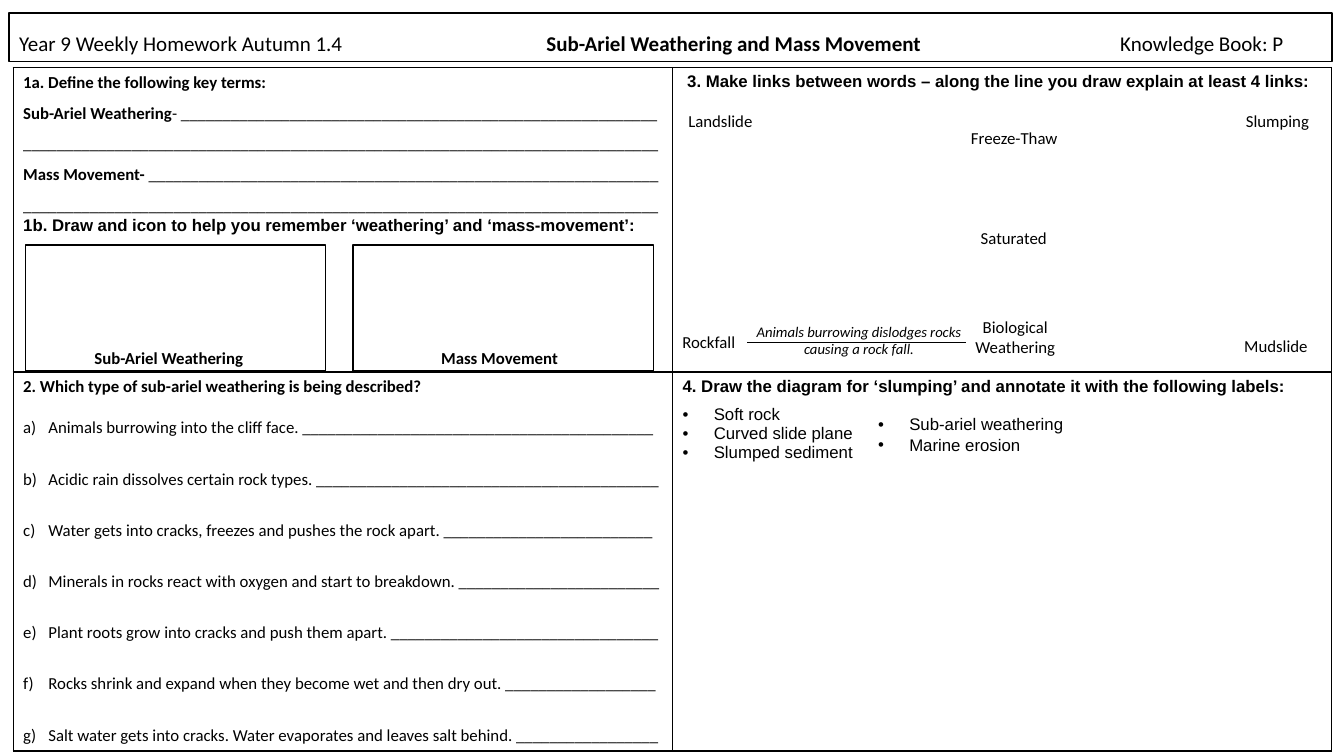
import dataclasses
import typing

import lxml.etree
import pptx
import pptx.dml.color
import pptx.enum.shapes
import pptx.enum.text
import pptx.oxml.ns
import pptx.util

Inches = pptx.util.Inches
Align = pptx.enum.text.PP_ALIGN


@dataclasses.dataclass(frozen=True)
class Theme:
    ink: pptx.dml.color.RGBColor = pptx.dml.color.RGBColor(0, 0, 0)
    paper: pptx.dml.color.RGBColor = pptx.dml.color.RGBColor(255, 255, 255)
    sans: str = "Calibri"
    plain: str = "Arial"
    title: float = 15
    body: float = 12
    note: float = 10.5
    rule: float = 1
    thin: float = 0.5


THEME = Theme()


class Run(typing.NamedTuple):
    text: str
    bold: bool = False
    font: str = THEME.sans
    size: float = THEME.body
    slant: bool = False


class Para(typing.NamedTuple):
    runs: list[Run]
    gap: float = 1
    mark: str = ""
    inset: float = 0
    align: Align = Align.LEFT


class Label(typing.NamedTuple):
    left: float
    top: float
    width: float
    height: float
    paras: list[Para]


def head(text: str, font: str = THEME.plain) -> Para:
    return Para([Run(text, True, font)])


def blank(count: int) -> str:
    """Return an answer line of the given number of underscores."""
    return "_" * count


def point(text: str, gap: float = 1) -> Para:
    return Para([Run(text, font=THEME.plain)], gap, "•", 0.31)


def word(left: float, top: float, width: float, text: str, height: float = 0.3,
         bold: bool = False, size: float = THEME.body, slant: bool = False) -> Label:
    run = Run(text, bold, size=size, slant=slant)
    return Label(left, top, width, height, [Para([run], align=Align.CENTER)])


TITLE = Para([
    Run("Year 9 Weekly Homework Autumn 1.4\t", size=THEME.title),
    Run("Sub-Ariel Weathering and Mass Movement\t", True, size=THEME.title),
    Run("Knowledge Book: P", size=THEME.title),
], 0.9)
STOPS = [5.23, 10.92]

TERMS = [
    head("1a. Define the following key terms:", THEME.sans),
    Para([Run("Sub-Ariel Weathering", True), Run("- " + blank(57))], 1.5),
    Para([Run(blank(76))], 1.5),
    Para([Run("Mass Movement- ", True), Run(blank(61))], 1.5),
    Para([Run(blank(76))], 1.5),
    head("1b. Draw and icon to help you remember ‘weathering’ and ‘mass-movement’:"),
]
LINKS = [head(" 3. Make links between words – along the line you draw explain at least 4 links:")]
CLUES = [
    ("Animals burrowing into the cliff face.", 42),
    ("Acidic rain dissolves certain rock types.", 41),
    ("Water gets into cracks, freezes and pushes the rock apart.", 25),
    ("Minerals in rocks react with oxygen and start to breakdown.", 24),
    ("Plant roots grow into cracks and push them apart.", 32),
    ("Rocks shrink and expand when they become wet and then dry out.", 18),
    ("Salt water gets into cracks. Water evaporates and leaves salt behind.", 17),
]
TYPES = [head("2. Which type of sub-ariel weathering is being described?", THEME.sans)] + [
    Para([Run(f"{clue} {blank(count)}")], 2.5 if row else 2, "a)", 0.25)
    for row, (clue, count) in enumerate(CLUES)
]
SLUMP = [
    head("4. Draw the diagram for ‘slumping’ and annotate it with the following labels:"),
    point("Soft rock", 1.5), point("Curved slide plane"), point("Slumped sediment"),
]
GRID = [[TERMS, LINKS], [TYPES, SLUMP]]
TALL = [3.02, 3.76]

WORDS = [
    word(6.65, 1.05, 0.99, "Landslide"),
    word(6.61, 3.24, 0.84, "Rockfall"),
    word(12.16, 3.28, 0.99, "Mudslide"),
    word(12.15, 1.05, 1.04, "Slumping"),
    word(9.58, 2.21, 0.95, "Saturated"),
    word(9.48, 1.22, 1.16, "Freeze-Thaw"),
    word(9.47, 3.09, 1.2, "Biological Weathering", 0.5),
    word(7.32, 3.15, 2.4, "Animals burrowing dislodges rocks causing a rock fall.",
         0.45, size=THEME.note, slant=True),
    Label(8.61, 4.06, 2.22, 0.5, [point("Sub-ariel weathering"), point("Marine erosion")]),
]
NAMES = [
    word(0.81, 3.4, 1.73, "Sub-Ariel Weathering", bold=True),
    word(4.09, 3.4, 1.73, "Mass Movement", bold=True),
]


def add(parent: typing.Any, tag: str, **attrs: str) -> typing.Any:
    return lxml.etree.SubElement(parent, pptx.oxml.ns.qn(tag), attrs)


def write(frame: typing.Any, paras: list[Para]) -> None:
    for row, para in enumerate(paras):
        line = frame.add_paragraph() if row else frame.paragraphs[0]
        line.alignment = para.align
        line.line_spacing = para.gap
        if para.mark:
            props = line._p.get_or_add_pPr()
            props.set("marL", str(Inches(para.inset)))
            props.set("indent", str(-Inches(para.inset)))
            if para.mark == "a)":
                add(props, "a:buAutoNum", type="alphaLcParenR")
            else:
                add(props, "a:buFont", typeface=THEME.plain)
                add(props, "a:buChar", char=para.mark)
        for part in para.runs:
            run = line.add_run()
            run.text = part.text
            run.font.name = part.font
            run.font.size = pptx.util.Pt(part.size)
            run.font.bold = part.bold
            run.font.italic = part.slant
            run.font.color.rgb = THEME.ink


def frame_box(shape: typing.Any) -> None:
    """Give a shape a white fill and a black outline."""
    shape.fill.solid()
    shape.fill.fore_color.rgb = THEME.paper
    shape.line.color.rgb = THEME.ink
    shape.line.width = pptx.util.Pt(THEME.rule)


def draw_title(slide: typing.Any) -> None:
    title = slide.shapes.title
    title.left, title.top, title.width, title.height = map(Inches, (0.09, 0.13, 13.12, 0.48))
    frame_box(title)
    frame = title.text_frame
    frame.auto_size = pptx.enum.text.MSO_AUTO_SIZE.NONE
    frame.vertical_anchor = pptx.enum.text.MSO_ANCHOR.BOTTOM
    write(frame, [TITLE])
    tabs = add(frame.paragraphs[0]._p.get_or_add_pPr(), "a:tabLst")
    for stop in STOPS:
        add(tabs, "a:tab", pos=str(Inches(stop)), algn="l")


def draw_grid(slide: typing.Any) -> None:
    table = slide.shapes.add_table(2, 2, *map(Inches, (0.13, 0.67, 13.08, sum(TALL)))).table
    table.first_row = table.horz_banding = False
    for row, tall in zip(table.rows, TALL):
        row.height = Inches(tall)
    for row, line in enumerate(GRID):
        for col, paras in enumerate(line):
            cell = table.cell(row, col)
            write(cell.text_frame, paras)
            for side in "LRTB":
                edge = add(cell._tc.get_or_add_tcPr(), f"a:ln{side}",
                           w=str(pptx.util.Pt(THEME.rule)))
                add(add(edge, "a:solidFill"), "a:srgbClr", val=str(THEME.ink))
            cell.fill.background()


def draw_label(slide: typing.Any, label: Label) -> None:
    box = slide.shapes.add_textbox(*map(Inches, label[:4]))
    box.text_frame.word_wrap = True
    box.text_frame.auto_size = pptx.enum.text.MSO_AUTO_SIZE.SHAPE_TO_FIT_TEXT
    write(box.text_frame, label.paras)


def draw_link(slide: typing.Any) -> None:
    link = slide.shapes.add_connector(pptx.enum.shapes.MSO_CONNECTOR.STRAIGHT,
                                      *map(Inches, (9.58, 3.4, 7.41, 3.4)))
    link.line.color.rgb = THEME.ink
    link.line.width = pptx.util.Pt(THEME.thin)
    add(link._element.spPr, "a:effectLst")


def main() -> None:
    deck = pptx.Presentation()
    deck.slide_width, deck.slide_height = Inches(13.33), Inches(7.5)
    slide = deck.slides.add_slide(deck.slide_layouts[5])
    draw_title(slide)
    draw_grid(slide)
    draw_link(slide)
    for left in (0.25, 3.5):
        box = slide.shapes.add_shape(pptx.enum.shapes.MSO_SHAPE.RECTANGLE,
                                     *map(Inches, (left, 2.43, 2.98, 1.25)))
        box.shadow.inherit = False
        frame_box(box)
    for label in WORDS + NAMES:
        draw_label(slide, label)
    deck.save("out.pptx")


if __name__ == "__main__":
    main()
